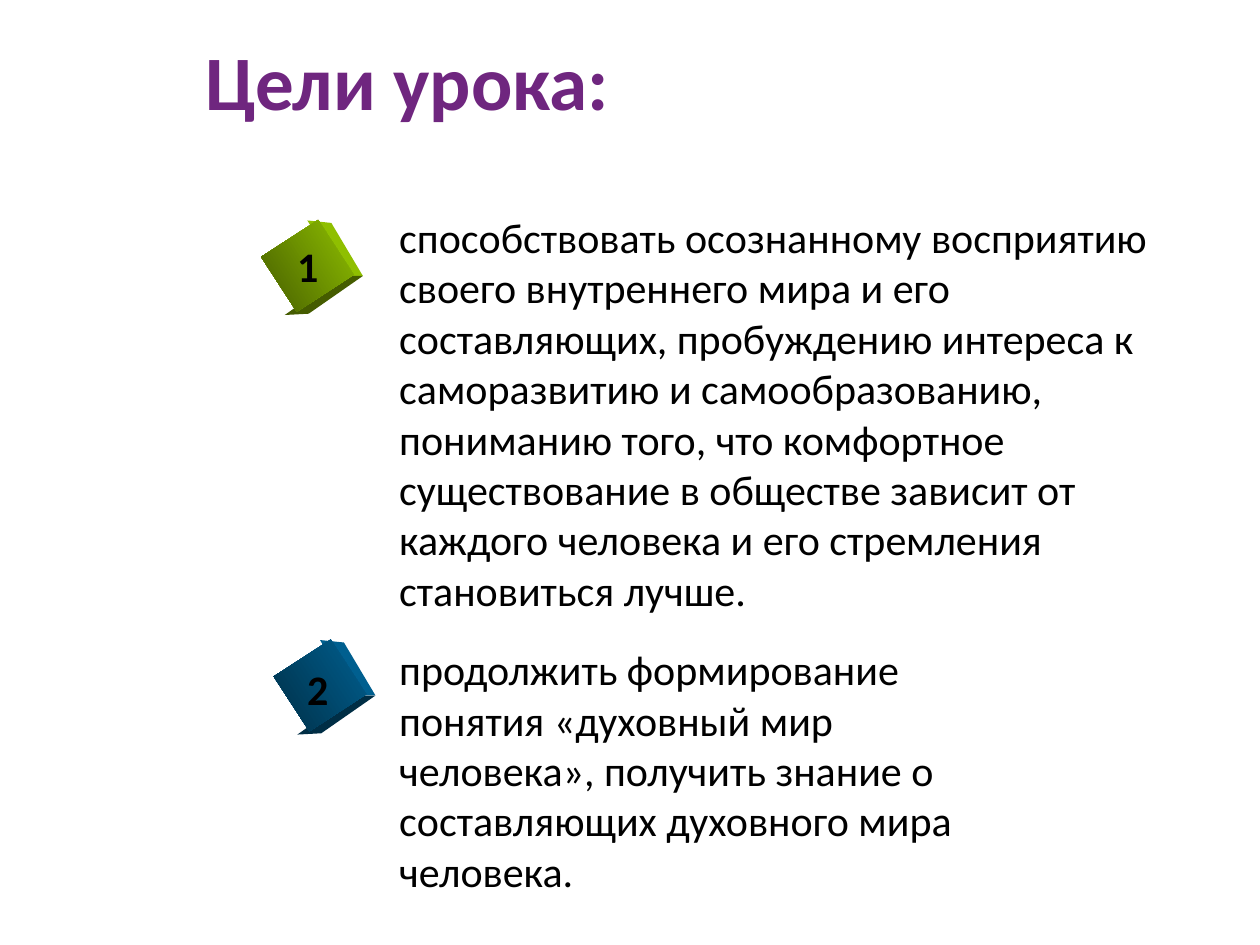
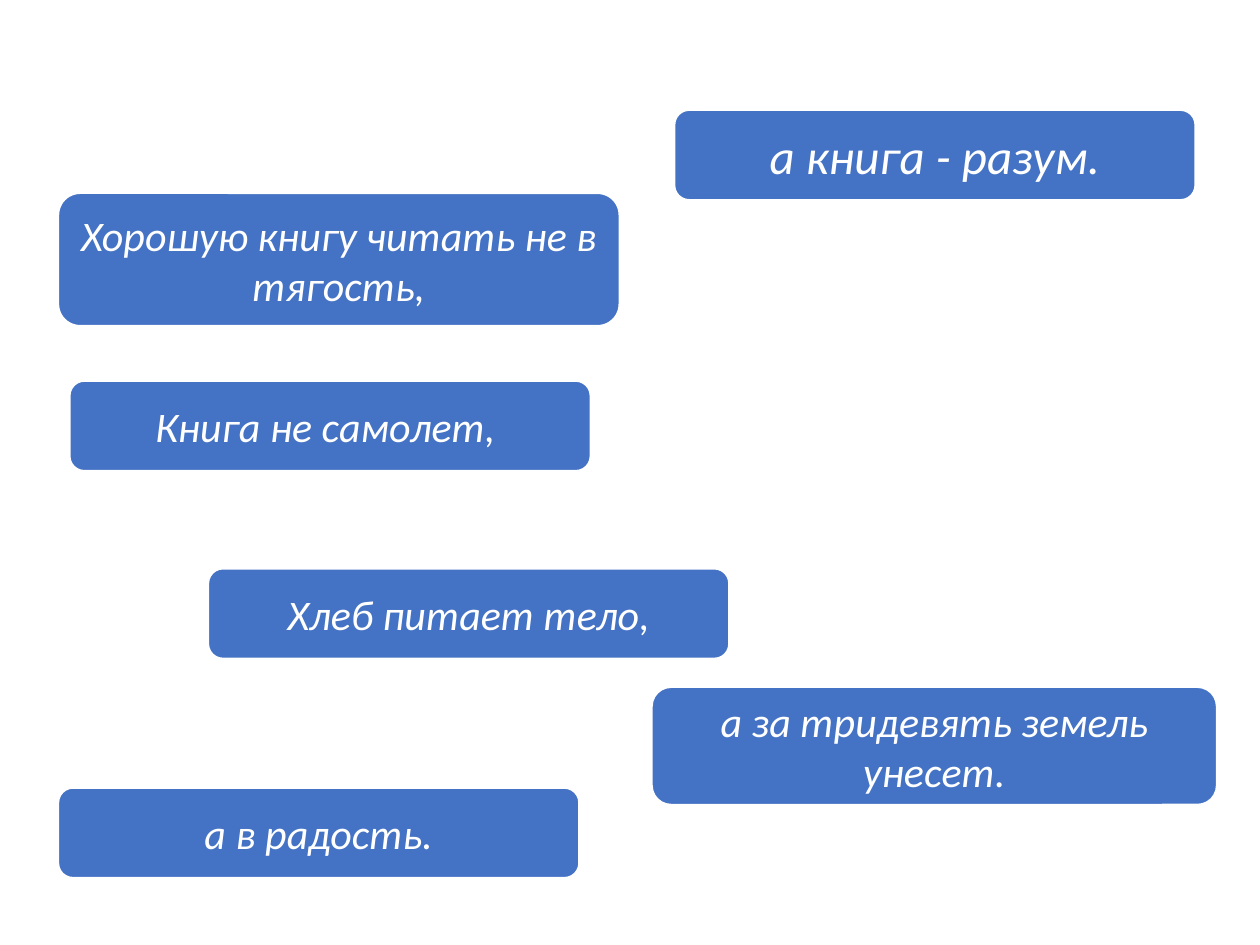
"""Builds two lesson slides: numbered goals and scattered halves of proverbs."""
from pptx import Presentation
from pptx.dml.color import RGBColor
from pptx.enum.shapes import MSO_SHAPE
from pptx.enum.text import MSO_ANCHOR, PP_ALIGN
from pptx.util import Inches, Pt

FONT = "Calibri"
PURPLE = RGBColor(0x6F, 0x26, 0x7F)
BLACK = RGBColor(0x00, 0x00, 0x00)
WHITE = RGBColor(0xFF, 0xFF, 0xFF)
BLUE = RGBColor(0x44, 0x72, 0xC4)
GREEN_FACES = (RGBColor(0x8F, 0xBF, 0x00), RGBColor(0x46, 0x5E, 0x00),
               RGBColor(0x8F, 0xBF, 0x00), RGBColor(0x45, 0x5C, 0x00))
NAVY_FACES = (RGBColor(0x00, 0x5F, 0x8F), RGBColor(0x00, 0x30, 0x48),
              RGBColor(0x00, 0x5F, 0x8F), RGBColor(0x00, 0x2E, 0x45))

deck = Presentation()
deck.slide_width, deck.slide_height = Inches(10), Inches(7.5)
COLUMN = deck.slide_width / 10
ROW = deck.slide_height / 7.5


def place(left, top, width, height):
    """Turn columns and rows into slide lengths."""
    return [round(size) for size in (left * COLUMN, top * ROW, width * COLUMN, height * ROW)]


def write(shape, text, size, color, bold=False, italic=False, wrap=True):
    """Put one styled paragraph into a shape and return the paragraph."""
    shape.text_frame.word_wrap = wrap
    para = shape.text_frame.paragraphs[0]
    para.text = text
    para.font.name, para.font.size = FONT, Pt(size)
    para.font.bold, para.font.italic = bold, italic
    para.font.color.rgb = color
    return para


page = deck.slides.add_slide(deck.slide_layouts[6])
title = page.shapes.add_textbox(*place(1.53, 0.19, 8.26, 0.98))
title.text_frame.vertical_anchor = MSO_ANCHOR.MIDDLE
write(title, "Цели урока:", 44, PURPLE, bold=True).line_spacing = 0.9

SIDE = [(0.26, -0.09), (0.45, -0.07), (0.7, 0.35), (0.52, 0.35)]
BASE = [(0.08, 0.66), (0.52, 0.35), (0.7, 0.35), (0.27, 0.65)]

goals = [
    ("1", 2.18, 1.84, GREEN_FACES, (2.26, 1.86), (3.07, 1.63, 6.52, 3.33),
     "способствовать осознанному восприятию своего внутреннего мира и его составляющих, "
     "пробуждению интереса к саморазвитию и самообразованию, пониманию того, что комфортное "
     "существование в обществе зависит от каждого человека и его стремления становиться лучше."),
    ("2", 2.28, 5.17, NAVY_FACES, (2.34, 5.22), (3.07, 5.06, 5, 2.12),
     "продолжить формирование понятия «духовный мир человека», получить знание "
     "о составляющих духовного мира человека."),
]
for number, left, top, (bright, dark, side, base), corner, area, goal in goals:
    cube = page.shapes.add_group_shape()
    for outline, color in ((SIDE, side), (BASE, base)):
        points = [(round((left + x) * COLUMN), round((top + y) * ROW)) for x, y in outline]
        builder = cube.shapes.build_freeform(*points[0])
        builder.add_line_segments(points[1:], close=True)
        face = builder.convert_to_shape()
        face.shadow.inherit = False
        face.line.fill.background()
        face.fill.solid()
        face.fill.fore_color.rgb = color
    front = cube.shapes.add_shape(MSO_SHAPE.RECTANGLE, *place(left, top, 0.52, 0.54))
    front.rotation = 57
    front.shadow.inherit = False
    front.line.fill.background()
    front.fill.gradient()
    front.fill.gradient_angle = 270
    for stop, shade in zip(front.fill.gradient_stops, (bright, dark)):
        stop.color.rgb = shade
    label = cube.shapes.add_textbox(*place(*corner, 0.37, 0.51))
    write(label, number, 24, BLACK, bold=True, wrap=False)
    write(page.shapes.add_textbox(*place(*area)), goal, 24, BLACK)

page = deck.slides.add_slide(deck.slide_layouts[6])
CARD_WIDTH, CARD_HEIGHT = 4.14, 0.72
proverb_halves = [
    ("Хлеб питает тело,", 1.65, 4.51, CARD_WIDTH, CARD_HEIGHT, 24),
    ("а в радость.", 0.46, 6.25, CARD_WIDTH, CARD_HEIGHT, 24),
    ("Хорошую книгу читать не в тягость,", 0.46, 1.53, 4.46, 1.06, 24),
    ("а за тридевять земель унесет.", 5.17, 5.45, 4.49, 0.94, 24),
    ("Книга не самолет, ", 0.55, 3.02, CARD_WIDTH, CARD_HEIGHT, 24),
    ("а книга - разум.", 5.35, 0.87, CARD_WIDTH, CARD_HEIGHT, 28),
]
for text, left, top, width, height, size in proverb_halves:
    card = page.shapes.add_shape(MSO_SHAPE.ROUNDED_RECTANGLE, *place(left, top, width, height))
    card.shadow.inherit = False
    card.fill.solid()
    card.fill.fore_color.rgb = BLUE
    card.line.color.rgb = WHITE
    card.line.width = Pt(1.5)
    card.text_frame.vertical_anchor = MSO_ANCHOR.MIDDLE
    write(card, text, size, WHITE, italic=True).alignment = PP_ALIGN.CENTER

deck.save("out.pptx")
